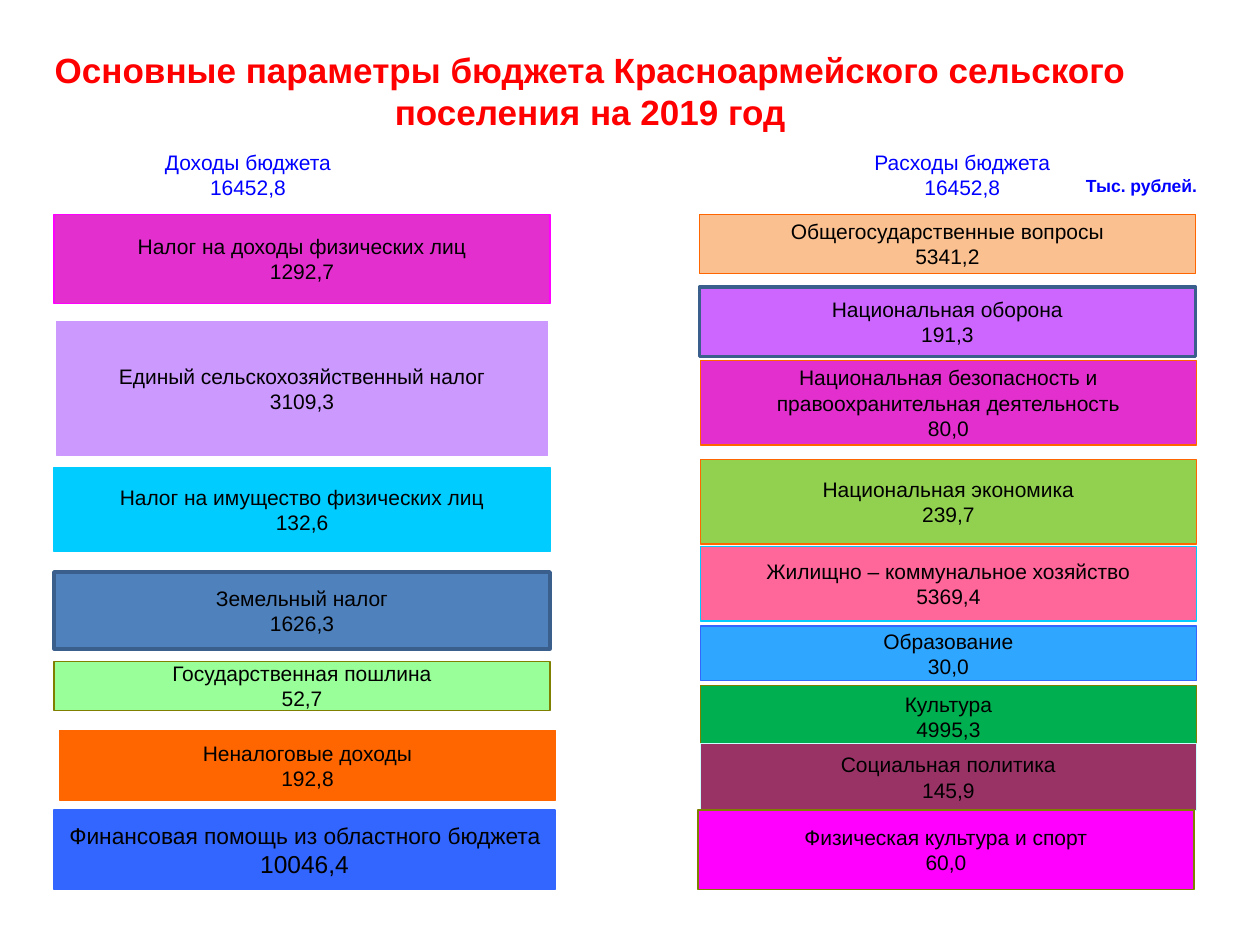
from dataclasses import dataclass

from pptx import Presentation
from pptx.dml.color import RGBColor
from pptx.enum.shapes import MSO_SHAPE
from pptx.enum.text import MSO_ANCHOR, PP_ALIGN
from pptx.util import Cm, Pt


@dataclass(frozen=True)
class Theme:
    font: str = "Arial"
    title_size: int = 20
    body_size: int = 12
    unit_size: int = 10
    aid_sizes: tuple = (13, 14)
    title: str = "FF0000"
    heading: str = "0000FF"
    ink: str = "000000"
    paper: str = "FFFFFF"
    magenta: str = "E32FCE"
    fuchsia: str = "FF00FF"
    lavender: str = "CC99FF"
    violet: str = "CC66FF"
    cyan: str = "00CCFF"
    steel: str = "4F81BD"
    navy: str = "3A5F8C"
    mint: str = "99FF99"
    olive: str = "808000"
    orange: str = "FF6600"
    blue: str = "3366FF"
    sky: str = "2FA6FF"
    peach: str = "FAC090"
    lime: str = "92D050"
    pink: str = "FF6699"
    green: str = "00B050"
    plum: str = "993366"
    ice: str = "CCFFFF"


def write(frame, text, *, font, size, color, bold=False, wrap=False):
    """Fill a frame with centred lines; size is one value or one per line."""
    lines = text.split("\n")
    sizes = size if isinstance(size, tuple) else (size,) * len(lines)
    frame.word_wrap = wrap
    frame.vertical_anchor = MSO_ANCHOR.MIDDLE
    for number, (line, points) in enumerate(zip(lines, sizes)):
        paragraph = frame.add_paragraph() if number else frame.paragraphs[0]
        paragraph.alignment = PP_ALIGN.CENTER
        run = paragraph.add_run()
        run.text = line
        run.font.name = font
        run.font.size = Pt(points)
        run.font.bold = bold
        run.font.color.rgb = RGBColor.from_string(color)


class BudgetSlide:
    def __init__(self, deck, theme):
        self.theme = theme
        self.slide = deck.slides.add_slide(deck.slide_layouts[5])

    def title(self, text, left, top, width, height):
        heading = self.slide.shapes.title
        heading.left, heading.top = Cm(left), Cm(top)
        heading.width, heading.height = Cm(width), Cm(height)
        write(heading.text_frame, text, font=self.theme.font, size=self.theme.title_size,
              color=self.theme.title, bold=True, wrap=True)

    def box(self, text, left, top, width, height, fill=None, line=None,
            weight=0.75, size=None, color=None, bold=False):
        block = self.slide.shapes.add_shape(
            MSO_SHAPE.RECTANGLE, Cm(left), Cm(top), Cm(width), Cm(height))
        block.shadow.inherit = False
        if fill:
            block.fill.solid()
            block.fill.fore_color.rgb = RGBColor.from_string(fill)
        else:
            block.fill.background()
        block.line.color.rgb = RGBColor.from_string(line or fill)
        block.line.width = Pt(weight)
        write(block.text_frame, text, font=self.theme.font, bold=bold,
              size=size or self.theme.body_size, color=color or self.theme.ink)

    def column(self, left, width, items):
        """Stack of items: text, top, height, fill, line and any overrides."""
        for text, top, height, fill, line, overrides in items:
            place = {"left": left, "width": width, **overrides}
            self.box(text, top=top, height=height, fill=fill, line=line, **place)


def main():
    deck = Presentation()
    deck.slide_width, deck.slide_height = Cm(25.4), Cm(19.05)
    t = Theme()
    budget = BudgetSlide(deck, t)

    # Title
    budget.title("Основные параметры бюджета Красноармейского сельского поселения на 2019 год",
                 0, 0.71, 23.8, 2.21)

    # Column totals and unit of measure
    for total, left, width in (("Доходы бюджета\n16452,8", 2.1, 5.8),
                               ("Расходы бюджета\n16452,8", 16.7, 5.4)):
        budget.box(total, left, 2.92, width, 1.2, t.paper, color=t.heading)
    budget.box("Тыс. рублей.", 21.51, 3.33, 3, 0.81, line=t.paper,
               size=t.unit_size, color=t.heading, bold=True)

    # Revenue
    budget.column(1.09, 10, [
        ("Налог на доходы физических лиц\n1292,7", 4.32, 1.8, t.magenta, t.fuchsia, {}),
        ("Единый сельскохозяйственный налог\n3109,3", 6.48, 2.7, t.lavender, t.lavender,
         {"left": 1.14, "width": 9.9}),
        ("Налог на имущество физических лиц\n132,6", 9.42, 1.7, t.cyan, t.cyan, {}),
        ("Земельный налог\n1626,3", 11.53, 1.55, t.steel, t.navy, {"weight": 2}),
        ("Государственная пошлина\n52,7", 13.33, 1, t.mint, t.olive, {}),
        ("Неналоговые доходы\n192,8", 14.73, 1.4, t.orange, t.orange, {"left": 1.2}),
        ("Финансовая помощь из областного бюджета\n10046,4", 16.33, 1.6, t.blue, t.blue,
         {"width": 10.1, "size": t.aid_sizes}),
    ])

    # Expenditure
    budget.column(14.12, 10, [
        ("Общегосударственные вопросы\n5341,2", 4.32, 1.2, t.peach, t.orange, {"left": 14.1}),
        ("Национальная оборона\n191,3", 5.79, 1.4, t.violet, t.navy,
         {"left": 14.1, "weight": 2}),
        ("Национальная безопасность и\nправоохранительная деятельность\n80,0",
         7.27, 1.7, t.magenta, t.orange, {}),
        ("Национальная экономика\n239,7", 9.27, 1.7, t.lime, t.orange, {}),
        ("Жилищно – коммунальное хозяйство\n5369,4", 11.02, 1.5, t.pink, t.cyan, {}),
        ("Образование\n30,0", 12.62, 1.1, t.sky, t.blue, {}),
        ("Культура\n4995,3", 13.82, 1.25, t.green, t.olive, {}),
        ("Социальная политика\n145,9", 14.99, 1.35, t.plum, t.ice, {}),
        ("Физическая культура и спорт\n60,0", 16.33, 1.6, t.fuchsia, t.olive, {"left": 14.07}),
    ])

    deck.save("out.pptx")


if __name__ == "__main__":
    main()
